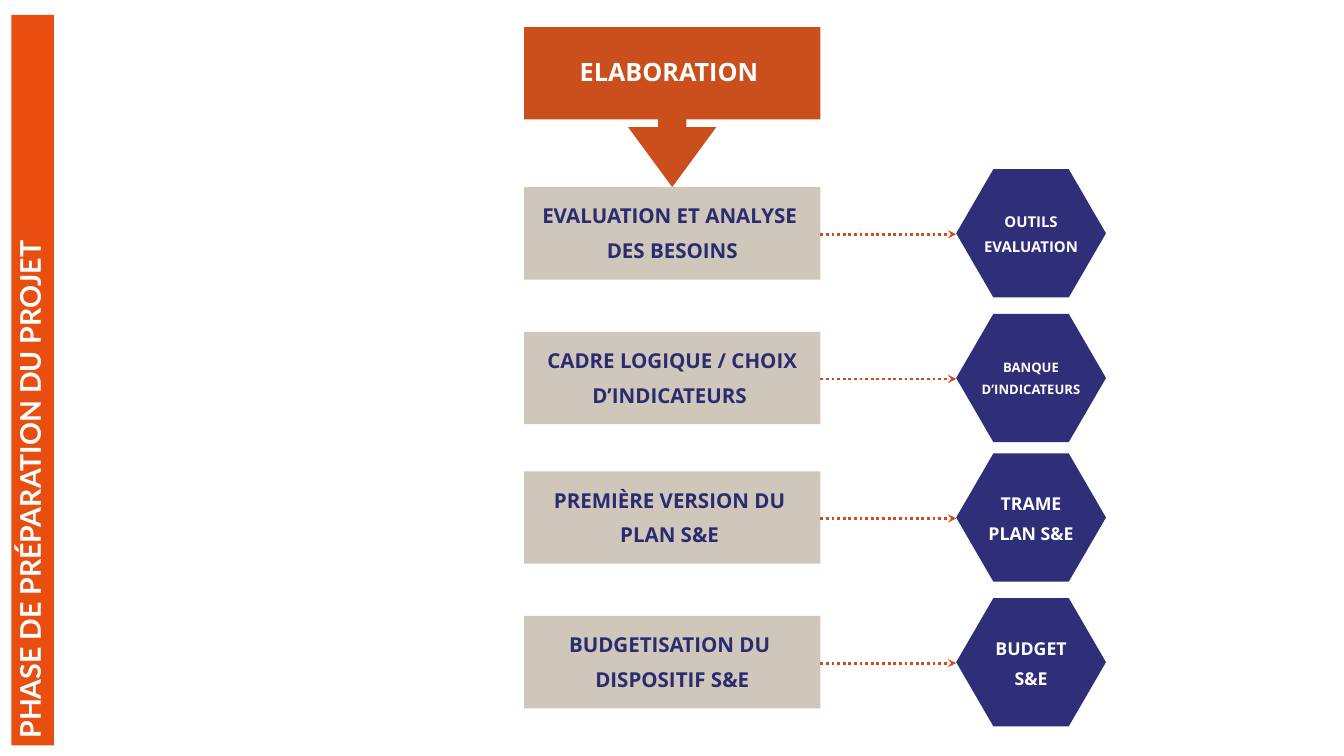
from dataclasses import dataclass

from lxml.etree import SubElement
from pptx import Presentation
from pptx.dml.color import RGBColor
from pptx.enum.dml import MSO_LINE
from pptx.enum.shapes import MSO_CONNECTOR, MSO_SHAPE
from pptx.enum.text import MSO_ANCHOR, PP_ALIGN
from pptx.oxml.ns import qn
from pptx.util import Pt


@dataclass(frozen=True)
class Theme:
    orange: str = "E84E0F"
    rust: str = "CA4F1C"
    sand: str = "CFC7BA"
    navy: str = "2E2E79"
    ink: str = "2B2B72"
    white: str = "FFFFFF"
    title_font: str = "Lato"
    body_font: str = "Open Sans"
    title_size: float = 30.5
    heading_size: float = 27
    step_size: float = 22


THEME = Theme()

PHASE = "PHASE DE PRÉPARATION DU PROJET"
HEADING = "ELABORATION "
# step, tool, tool type size, vertical centre; \n is a paragraph, \v a line break
STEPS = [
    ("EVALUATION ET ANALYSE \nDES BESOINS", "OUTILS\vEVALUATION", 16, 250),
    ("CADRE LOGIQUE / CHOIX D’INDICATEURS ", "BANQUE\vD’INDICATEURS", 14, 405),
    ("PREMIÈRE VERSION DU \nPLAN S&E ", "TRAME\vPLAN S&E", 19, 554.5),
    ("BUDGETISATION DU \nDISPOSITIF S&E", "BUDGET\vS&E", 19, 709.5),
]

SLIDE_W, SLIDE_H = 1440, 810
BOX_X, BOX_W, BOX_H = 561.5, 317.5, 99
HEX_X, HEX_W, HEX_H = 1024.5, 160.5, 137.5
HEADING_Y = 29
ARROW_W, ARROW_H = 94.5, 165.5
BAR_X, BAR_Y, BAR_W, BAR_H = 12.25, 16, 45.5, 782.5


def write(shape, text, *, size, color, font=THEME.body_font, align=PP_ALIGN.CENTER,
          spacing=1.4, insets=(4.5, 4.5, 4.5, 4.5), wrap=True):
    """Fill a shape with bold text; insets run left, top, right, bottom."""
    frame = shape.text_frame
    frame.text = text
    frame.word_wrap = wrap
    frame.vertical_anchor = MSO_ANCHOR.MIDDLE
    frame.margin_left, frame.margin_top, frame.margin_right, frame.margin_bottom = map(Pt, insets)
    for paragraph in frame.paragraphs:
        paragraph.alignment = align
        paragraph.line_spacing = spacing
        paragraph.space_before = Pt(0)
        for run in paragraph.runs:
            run.font.name = font
            run.font.size = Pt(size)
            run.font.bold = True
            run.font.color.rgb = RGBColor.from_string(color)


def paint(shape, color):
    shape.fill.solid()
    shape.fill.fore_color.rgb = RGBColor.from_string(color)
    shape.line.fill.background()


def add_block(slide, preset, x, y, w, h, color):
    block = slide.shapes.add_shape(preset, Pt(x), Pt(y), Pt(w), Pt(h))
    block.shadow.inherit = False
    paint(block, color)
    return block


def add_dotted_arrow(slide, start_x, end_x, y):
    arrow = slide.shapes.add_connector(
        MSO_CONNECTOR.STRAIGHT, Pt(start_x), Pt(y), Pt(end_x), Pt(y))
    arrow.line.color.rgb = RGBColor.from_string(THEME.rust)
    arrow.line.width = Pt(3)
    arrow.line.dash_style = MSO_LINE.ROUND_DOT
    properties = arrow._element.spPr
    SubElement(properties.find(qn("a:ln")), qn("a:tailEnd"), type="stealth")
    SubElement(properties, qn("a:effectLst"))


def add_phase_bar(slide):
    bar = slide.shapes.title
    # The bar is laid out horizontally, then turned about its centre.
    bar.left = Pt(BAR_X + (BAR_W - BAR_H) / 2)
    bar.top = Pt(BAR_Y + (BAR_H - BAR_W) / 2)
    bar.width, bar.height = Pt(BAR_H), Pt(BAR_W)
    bar.rotation = 270
    paint(bar, THEME.orange)
    write(bar, PHASE, size=THEME.title_size, color=THEME.white, font=THEME.title_font,
          align=PP_ALIGN.LEFT, spacing=0.8, insets=(7.2, 7.2, 7.2, 7.2))


def add_heading(slide):
    first_step_top = STEPS[0][3] - BOX_H / 2
    arrow = add_block(slide, MSO_SHAPE.DOWN_ARROW, BOX_X + (BOX_W - ARROW_W) / 2,
                      first_step_top - ARROW_H, ARROW_W, ARROW_H, THEME.rust)
    arrow.adjustments[0], arrow.adjustments[1] = 0.32, 0.68
    heading = add_block(slide, MSO_SHAPE.RECTANGLE, BOX_X, HEADING_Y, BOX_W, BOX_H, THEME.rust)
    write(heading, HEADING, size=THEME.heading_size, color=THEME.white,
          insets=(4.5, 4.5, 4.5, 22))


def add_step(slide, step, tool, tool_size, centre):
    box = add_block(slide, MSO_SHAPE.RECTANGLE, BOX_X, centre - BOX_H / 2,
                    BOX_W, BOX_H, THEME.sand)
    write(box, step, size=THEME.step_size, color=THEME.ink, insets=(4.5, 4.5, 4.5, 16))
    hexagon = add_block(slide, MSO_SHAPE.HEXAGON, HEX_X, centre - HEX_H / 2,
                        HEX_W, HEX_H, THEME.navy)
    hexagon.adjustments[0] = 0.29
    write(hexagon, tool, size=tool_size, color=THEME.white, insets=(0, 0, 0, 7), wrap=False)
    add_dotted_arrow(slide, BOX_X + BOX_W, HEX_X, centre + 1)


def main():
    deck = Presentation()
    deck.slide_width, deck.slide_height = Pt(SLIDE_W), Pt(SLIDE_H)
    slide = deck.slides.add_slide(deck.slide_layouts[5])
    add_phase_bar(slide)
    add_heading(slide)
    for step in STEPS:
        add_step(slide, *step)
    deck.save("out.pptx")


if __name__ == "__main__":
    main()
